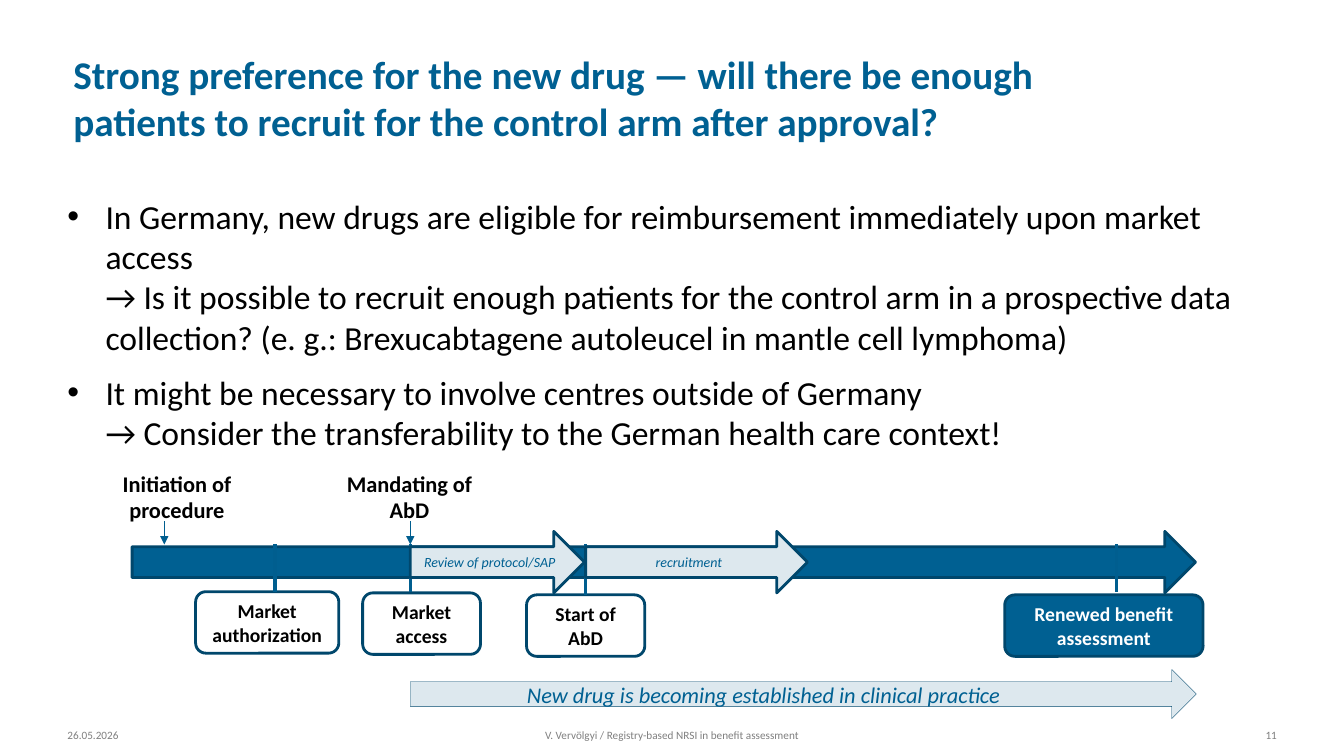
"""Build the slide on recruiting control-arm patients after a drug's approval."""
from lxml import etree
from pptx import Presentation
from pptx.dml.color import RGBColor
from pptx.enum.shapes import MSO_CONNECTOR, MSO_SHAPE
from pptx.enum.text import MSO_ANCHOR, PP_ALIGN
from pptx.oxml.ns import qn
from pptx.util import Cm, Pt

ARROW, ROUNDED = MSO_SHAPE.RIGHT_ARROW, MSO_SHAPE.ROUNDED_RECTANGLE
STRAIGHT = MSO_CONNECTOR.STRAIGHT
LEFT, CENTER, RIGHT = PP_ALIGN.LEFT, PP_ALIGN.CENTER, PP_ALIGN.RIGHT
TOP, MIDDLE = MSO_ANCHOR.TOP, MSO_ANCHOR.MIDDLE
COLORS = {
    "blue": "006092",
    "outline": "00476C",
    "tick": "005E8F",
    "pale": "DDE8EE",
    "black": "000000",
    "white": "FFFFFF",
    "grey": "7F7F7F",
}

prs = Presentation()
prs.slide_width, prs.slide_height = Cm(33.87), Cm(19.05)
slide = prs.slides.add_slide(prs.slide_layouts[6])
shapes = slide.shapes


def write(shape, paragraphs, size, color, bold=False, italic=False,
          align=CENTER, anchor=MIDDLE, inset=None):
    """Fill a shape with uniformly formatted paragraphs."""
    frame = shape.text_frame
    frame.word_wrap = True
    frame.vertical_anchor = anchor
    if inset is not None:
        frame.margin_left = frame.margin_right = Cm(inset)
        frame.margin_top = frame.margin_bottom = 0
    for number, text in enumerate(paragraphs):
        paragraph = frame.add_paragraph() if number else frame.paragraphs[0]
        paragraph.text = text
        paragraph.alignment = align
        for run in paragraph.runs:
            run.font.name = "Calibri"
            run.font.size = Pt(size)
            run.font.bold = bold
            run.font.italic = italic
            run.font.color.rgb = RGBColor.from_string(COLORS[color])


def draw(kind, left, top, width, height, fill, weight=2):
    """Add a filled, outlined shape without a shadow."""
    shape = shapes.add_shape(kind, Cm(left), Cm(top), Cm(width), Cm(height))
    shape.shadow.inherit = False
    shape.fill.solid()
    shape.fill.fore_color.rgb = RGBColor.from_string(COLORS[fill])
    shape.line.color.rgb = RGBColor.from_string(COLORS["outline"])
    shape.line.width = Pt(weight)
    return shape


draw(ARROW, 10.34, 16.87, 19.81, 1.24, "pale", 0.25)

title = shapes.add_textbox(Cm(1.85), Cm(1.27), Cm(26.16), Cm(2.57))
write(title, ["Strong preference for the new drug — will there be enough "
              "patients to recruit for the control arm after approval?"],
      28, "blue", bold=True, align=LEFT, anchor=TOP, inset=0)

points = shapes.add_textbox(Cm(1.7), Cm(4.93), Cm(30.48), Cm(13.26))
write(points, [
    "In Germany, new drugs are eligible for reimbursement immediately upon market access\n"
    "→ Is it possible to recruit enough patients for the control arm in a prospective data "
    "collection? (e. g.: Brexucabtagene autoleucel in mantle cell lymphoma)",
    "It might be necessary to involve centres outside of Germany\n"
    "→ Consider the transferability to the German health care context!",
], 24, "black", align=LEFT, anchor=TOP, inset=0)
for number, point in enumerate(points.text_frame.paragraphs):
    point.space_before = Pt(4.8 if number else 0)
    point.space_after = Pt(6)
    properties = point._p.get_or_add_pPr()
    properties.set("marL", str(Cm(0.96)))
    properties.set("indent", str(-Cm(0.96)))
    etree.SubElement(properties, qn("a:buFont")).set("typeface", "Arial")
    etree.SubElement(properties, qn("a:buChar")).set("char", "•")

footers = [
    ("26.05.2026", 1.7, 4.24, LEFT, 0),
    ("V. Vervölgyi / Registry-based NRSI in benefit assessment", 6.27, 21.34, CENTER, 0.25),
    ("11", 27.94, 4.24, RIGHT, 0),
]
for text, left, width, align, inset in footers:
    footer = shapes.add_textbox(Cm(left), Cm(18.31), Cm(width), Cm(0.43))
    write(footer, [text], 8, "grey", align=align, inset=inset)

uptake = shapes.add_textbox(Cm(10.34), Cm(17.04), Cm(17.81), Cm(0.94))
write(uptake, ["New drug is becoming established in clinical practice"],
      16, "blue", italic=True, anchor=TOP)

draw(ARROW, 3.33, 13.39, 26.8, 1.55, "blue")

milestones = [
    ("Market authorization", 4.93, 14.91, 3.61, "white", "black", 6.93),
    ("Market access", 9.14, 14.94, 2.97, "white", "black", 10.34),
    ("Start of AbD", 13.27, 14.99, 2.98, "white", "black", 14.76),
    ("Renewed benefit assessment", 25.32, 14.99, 5, "blue", "white", 28.14),
]
for text, left, top, width, fill, color, tick_x in milestones:
    milestone = draw(ROUNDED, left, top, width, 1.55, fill)
    write(milestone, [text], 14, color, bold=True)
    tick = shapes.add_connector(STRAIGHT, Cm(tick_x), Cm(13.72), Cm(tick_x), Cm(14.91))
    if abs(left + width / 2 - tick_x) < 0.01:
        tick.end_connect(milestone, 0)
    tick.line.color.rgb = RGBColor.from_string(COLORS["tick"])
    tick.line.width = Pt(2.25)
    etree.SubElement(tick._element.spPr, qn("a:effectLst"))

events = [("Initiation of procedure", 2.34, 4.14), ("Mandating of AbD", 8.2, 10.34)]
for text, left, pointer_x in events:
    event = shapes.add_textbox(Cm(left), Cm(11.71), Cm(4.24), Cm(1.63))
    write(event, [text], 16, "black", bold=True, anchor=TOP)
    pointer = shapes.add_connector(STRAIGHT, Cm(pointer_x), Cm(13.13), Cm(pointer_x), Cm(13.72))
    pointer.line.color.rgb = RGBColor.from_string(COLORS["tick"])
    pointer.line.width = Pt(0.75)
    etree.SubElement(pointer.line._get_or_add_ln(), qn("a:tailEnd")).set("type", "triangle")
    etree.SubElement(pointer._element.spPr, qn("a:effectLst"))

phases = [("recruitment", 14.76, 5.59), ("Review of protocol/SAP", 10.34, 4.39)]
for text, left, width in phases:
    phase = draw(ARROW, left, 13.39, width, 1.55, "pale")
    write(phase, [text], 10, "blue", italic=True)

prs.save("out.pptx")
